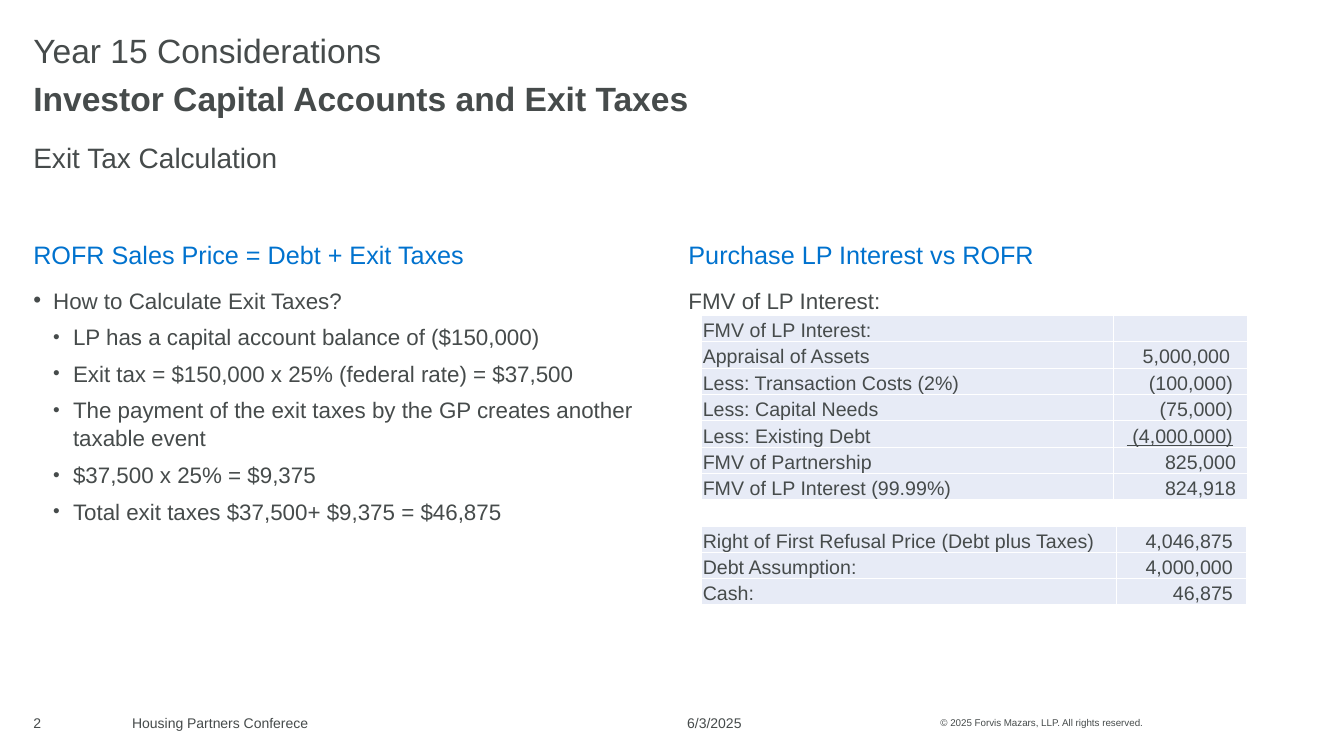
from dataclasses import dataclass

from lxml.etree import SubElement
from pptx import Presentation
from pptx.dml.color import RGBColor
from pptx.enum.text import MSO_ANCHOR as Anchor, MSO_AUTO_SIZE as AutoSize, PP_ALIGN as Align
from pptx.oxml.ns import qn
from pptx.util import Cm, Pt

COLORS = {"text": "464B4B", "heading": "0072CE", "cell": "E7EBF6", "border": "FFFFFF"}
FONT = "Arial"
LEFT, RIGHT = 0.84, 17.35  # column starts
COLUMN = 15.7              # column width
FOOTER_TOP, FOOTER_HEIGHT = 17.83, 0.76
INDENT = 0.5


@dataclass
class Line:
    text: str
    level: int = 0
    bullet: bool = False


@dataclass
class TextBlock:
    left: float
    top: float
    width: float
    height: float
    lines: list[Line]
    size: float
    color: str = "text"
    bold: bool = False
    spacing: float = 1.05
    after: float = 6
    anchor: Anchor = Anchor.TOP
    inset: float = 0
    placeholder: int | None = None


@dataclass
class Row:
    label: str
    amount: str = ""
    margin: float = 0.38  # space right of the amount
    underline: bool = False


@dataclass
class AmountTable:
    top: float
    height: float
    columns: tuple[float, float]
    rows: list[Row]


def set_font(para, size: float, color: str = "text", bold: bool = False) -> None:
    font = para.font
    font.name, font.size, font.bold = FONT, Pt(size), bold
    font.color.rgb = RGBColor.from_string(COLORS[color])


def set_bullet(para, line: Line) -> None:
    props = para._p.get_or_add_pPr()
    if not line.bullet:
        props.set("marL", "0")
        props.set("indent", "0")
        SubElement(props, qn("a:buNone"))
        return
    props.set("marL", str(Cm(INDENT * (line.level + 1))))
    props.set("indent", str(-Cm(INDENT)))
    if line.level:
        SubElement(props, qn("a:buSzPct"), val="85000")
    SubElement(props, qn("a:buFont"), typeface=FONT)
    SubElement(props, qn("a:buChar"), char="•")


def draw_text(slide, block: TextBlock) -> None:
    place = [Cm(value) for value in (block.left, block.top, block.width, block.height)]
    if block.placeholder is None:
        box = slide.shapes.add_textbox(*place)
    else:
        box = slide.placeholders[block.placeholder]
        box.left, box.top, box.width, box.height = place
    frame = box.text_frame
    frame.word_wrap, frame.auto_size = True, AutoSize.NONE
    frame.vertical_anchor = block.anchor
    frame.margin_left = frame.margin_right = 0
    frame.margin_top = frame.margin_bottom = Cm(block.inset)
    for index, line in enumerate(block.lines):
        para = frame.add_paragraph() if index else frame.paragraphs[0]
        para.text, para.level, para.alignment = line.text, line.level, Align.LEFT
        set_bullet(para, line)
        para.line_spacing = block.spacing
        para.space_before, para.space_after = Pt(0), Pt(block.after)
        set_font(para, block.size, block.color, block.bold)


def format_cell(cell, text: str) -> None:
    cell.text = text
    cell.vertical_anchor = Anchor.BOTTOM
    cell.margin_left = cell.margin_right = cell.margin_top = Cm(0.03)
    cell.margin_bottom = 0
    props = cell._tc.get_or_add_tcPr()
    for side in ("lnL", "lnR", "lnT", "lnB"):
        border = SubElement(props, qn(f"a:{side}"), w=str(Pt(1)))
        fill = SubElement(border, qn("a:solidFill"))
        SubElement(fill, qn("a:srgbClr"), val=COLORS["border"])
    cell.fill.solid()
    cell.fill.fore_color.rgb = RGBColor.from_string(COLORS["cell"])
    set_font(cell.text_frame.paragraphs[0], 14)


def draw_table(slide, data: AmountTable) -> None:
    table = slide.shapes.add_table(
        len(data.rows), 2, Cm(17.68), Cm(data.top), Cm(sum(data.columns)), Cm(data.height)
    ).table
    table.first_row = table.horz_banding = False
    for column, width in zip(table.columns, data.columns):
        column.width = Cm(width)
    for index, row in enumerate(data.rows):
        label, amount = table.cell(index, 0), table.cell(index, 1)
        format_cell(label, row.label)
        format_cell(amount, row.amount)
        amount.margin_right = Cm(row.margin)
        para = amount.text_frame.paragraphs[0]
        para.alignment = Align.RIGHT
        if row.underline:
            para.font.underline = True


def footer(left: float, width: float, text: str, size: float = 10) -> TextBlock:
    return TextBlock(left, FOOTER_TOP, width, FOOTER_HEIGHT, [Line(text)], size,
                     spacing=1.0, after=0, anchor=Anchor.MIDDLE, inset=0.13)


def column_heading(left: float, text: str, placeholder: int) -> TextBlock:
    return TextBlock(left, 6, COLUMN, 0.94, [Line(text)], 18, "heading", placeholder=placeholder)


def column_body(left: float, lines: list[Line], placeholder: int) -> TextBlock:
    return TextBlock(left, 7.19, COLUMN, 8.59, lines, 16, placeholder=placeholder)


EXIT_TAX_STEPS = [
    "LP has a capital account balance of ($150,000)",
    "Exit tax = $150,000 x 25% (federal rate) = $37,500",
    "The payment of the exit taxes by the GP creates another taxable event",
    "$37,500 x 25% = $9,375",
    "Total exit taxes $37,500+ $9,375 = $46,875",
]

BLOCKS = [
    # Titles
    TextBlock(LEFT, 0.84, COLUMN, 0.99, [Line("Year 15 Considerations")], 24,
              spacing=0.9, after=0, anchor=Anchor.MIDDLE, placeholder=0),
    TextBlock(LEFT, 1.88, 22.15, 1.12, [Line("Investor Capital Accounts and Exit Taxes")], 24,
              bold=True, anchor=Anchor.MIDDLE),
    TextBlock(LEFT, 3.5, 32.18, 2, [Line("Exit Tax Calculation")], 20),
    # Two columns
    column_heading(LEFT, "ROFR Sales Price = Debt + Exit Taxes", 1),
    column_body(LEFT, [Line("How to Calculate Exit Taxes?", bullet=True)]
                + [Line(step, 1, True) for step in EXIT_TAX_STEPS], 2),
    column_heading(RIGHT, "Purchase LP Interest vs ROFR", 3),
    column_body(RIGHT, [Line("FMV of LP Interest:")], 4),
    # Footer
    footer(LEFT, 2.49, "2"),
    footer(3.33, 13.59, "Housing Partners Conferece"),
    footer(17.32, 3.5, "6/3/2025"),
    footer(23.7, 5.59, "© 2025 Forvis Mazars, LLP. All rights reserved.", 7),
]

TABLES = [
    AmountTable(7.95, 4.65, (10.39, 3.38), [
        Row("FMV of LP Interest:"),
        Row("Appraisal of Assets", "5,000,000", 0.45),
        Row("Less: Transaction Costs (2%)", "(100,000)"),
        Row("Less: Capital Needs", "(75,000)"),
        Row("Less: Existing Debt", " (4,000,000)", underline=True),
        Row("FMV of Partnership", "825,000", 0.3),
        Row("FMV of LP Interest (99.99%)", "824,918", 0.3),
    ]),
    AmountTable(13.26, 1.98, (10.46, 3.28), [
        Row("Right of First Refusal Price (Debt plus Taxes)", "4,046,875", 0.35),
        Row("Debt Assumption:", "4,000,000", 0.35),
        Row("Cash:", "46,875", 0.35),
    ]),
]


def main() -> None:
    deck = Presentation()
    deck.slide_width, deck.slide_height = Cm(33.87), Cm(19.05)
    page = deck.slides.add_slide(deck.slide_layouts.get_by_name("Comparison"))
    for block in BLOCKS:
        draw_text(page, block)
    for table in TABLES:
        draw_table(page, table)
    deck.save("out.pptx")


if __name__ == "__main__":
    main()
